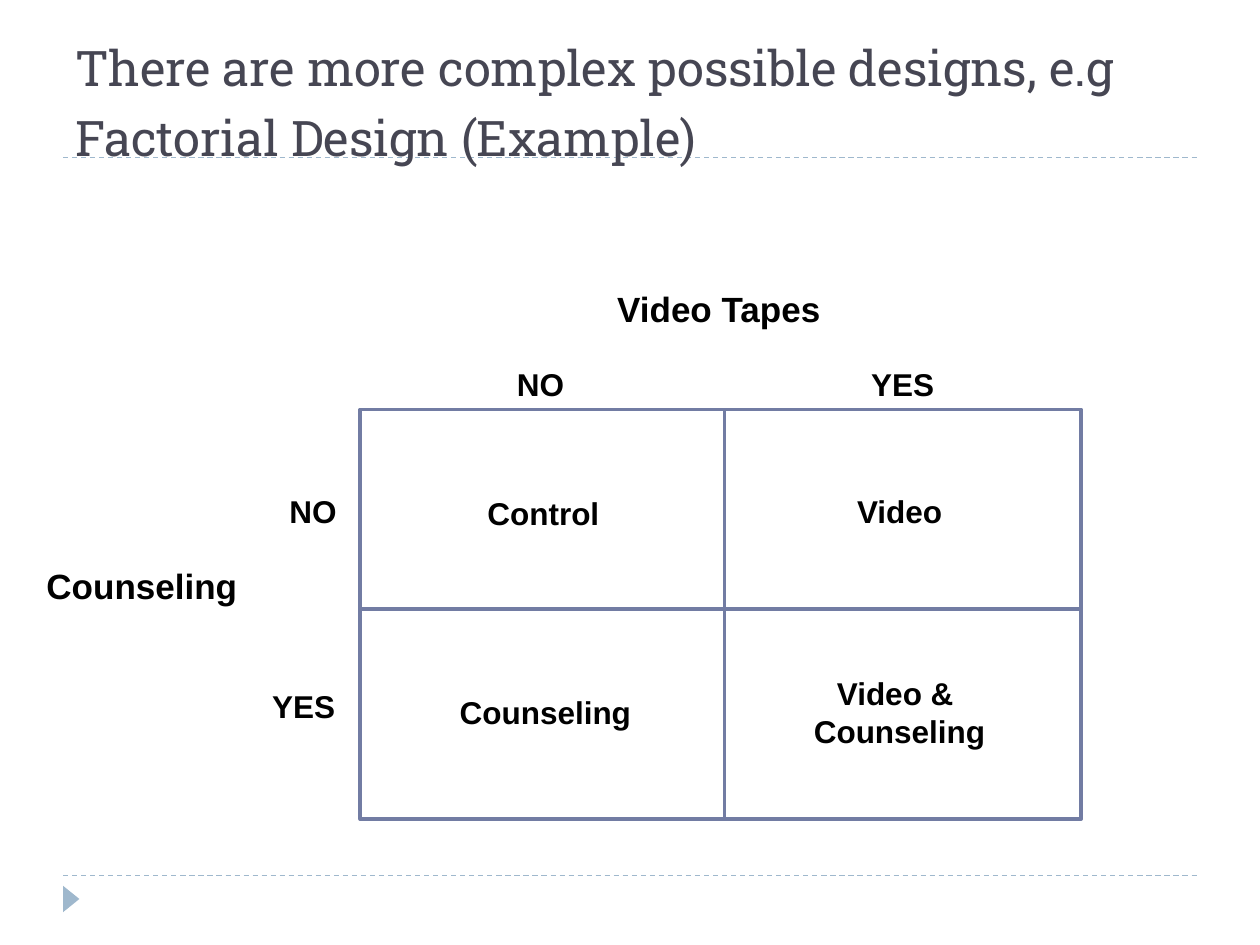
from dataclasses import dataclass

from lxml import etree
from pptx import Presentation
from pptx import util as u
from pptx.dml.color import RGBColor
from pptx.enum import dml, shapes, text
from pptx.oxml.ns import qn

BLACK = RGBColor(0x00, 0x00, 0x00)
TITLE_GRAY = RGBColor(0x46, 0x46, 0x53)
GRID_BLUE = RGBColor(0x72, 0x7C, 0xA3)
PALE_BLUE = RGBColor(0x9F, 0xB8, 0xCD)

LEFT, CENTER, RIGHT = text.PP_ALIGN.LEFT, text.PP_ALIGN.CENTER, text.PP_ALIGN.RIGHT

# Edges of the two-by-two design grid, in inches
GRID_LEFT, GRID_MIDDLE, GRID_RIGHT = 2.86, 5.75, 8.58
GRID_TOP, GRID_CENTER, GRID_BOTTOM = 3.25, 4.83, 6.5


@dataclass
class Label:
    wording: str
    left: float
    top: float
    width: float
    height: float = 0.4
    align: text.PP_ALIGN = CENTER
    size: int = 18
    wrap: bool = False


@dataclass
class Rule:
    start: tuple[float, float]
    end: tuple[float, float]
    color: RGBColor = GRID_BLUE
    width: float = 2.25
    dashed: bool = False


LABELS = [
    # Cells
    Label("Control", 3.77, 3.87, 1.09, align=LEFT),
    Label("Video", 6.7, 3.86, 0.88),
    Label("Counseling", 3.55, 5.45, 1.56, align=LEFT),
    Label("Video & \nCounseling", 6.36, 5.3, 1.56, 0.7),
    # Factor names
    Label("Counseling", 0.27, 4.43, 1.72, 0.43, LEFT, 20),
    Label("Video Tapes", 2.84, 2.23, 5.73, 0.43, size=20, wrap=True),
    # Row levels
    Label("NO", 2.19, 3.86, 0.58, align=RIGHT),
    Label("YES", 2.06, 5.4, 0.7, align=RIGHT),
    # Column levels
    Label("NO", 2.83, 2.85, 2.92, wrap=True),
    Label("YES", GRID_MIDDLE, 2.85, 2.83, wrap=True),
]

FRAME_RULES = [
    Rule((0.5, y), (9.5, y), PALE_BLUE, 0.75, True) for y in (6.95, 1.25)
]
GRID_RULES = [
    Rule((GRID_LEFT, GRID_CENTER), (GRID_RIGHT, GRID_CENTER)),
    Rule((GRID_MIDDLE, GRID_TOP), (GRID_MIDDLE, GRID_BOTTOM)),
]


def draw_rule(slide, rule: Rule) -> None:
    points = [u.Inches(value) for value in (*rule.start, *rule.end)]
    connector = slide.shapes.add_connector(shapes.MSO_CONNECTOR.STRAIGHT, *points)
    connector.line.color.rgb = rule.color
    connector.line.width = u.Pt(rule.width)
    if rule.dashed:
        connector.line.dash_style = dml.MSO_LINE.DASH
    etree.SubElement(connector._element.spPr, qn("a:effectLst"))


def draw_label(slide, label: Label) -> None:
    box = slide.shapes.add_textbox(
        u.Inches(label.left), u.Inches(label.top),
        u.Inches(label.width), u.Inches(label.height),
    )
    frame = box.text_frame
    frame.text = label.wording
    frame.word_wrap = label.wrap
    frame.auto_size = text.MSO_AUTO_SIZE.SHAPE_TO_FIT_TEXT
    for paragraph in frame.paragraphs:
        paragraph.alignment = label.align
        for run in paragraph.runs:
            run.font.name = "Arial"
            run.font.size = u.Pt(label.size)
            run.font.bold = True
            run.font.color.rgb = BLACK


def draw_marker(slide) -> None:
    marker = slide.shapes.add_shape(
        shapes.MSO_SHAPE.ISOSCELES_TRIANGLE,
        u.Inches(0.46), u.Inches(7.07), u.Inches(0.21), u.Inches(0.13),
    )
    marker.rotation = 90
    marker.shadow.inherit = False
    marker.fill.solid()
    marker.fill.fore_color.rgb = PALE_BLUE
    marker.line.fill.background()


def draw_grid(slide) -> None:
    outline = slide.shapes.add_shape(
        shapes.MSO_SHAPE.RECTANGLE,
        u.Inches(GRID_LEFT), u.Inches(GRID_TOP),
        u.Inches(GRID_RIGHT - GRID_LEFT), u.Inches(GRID_BOTTOM - GRID_TOP),
    )
    outline.shadow.inherit = False
    outline.fill.background()
    outline.line.color.rgb = GRID_BLUE
    outline.line.width = u.Pt(2.25)
    for rule in GRID_RULES:
        draw_rule(slide, rule)


def draw_title(slide) -> None:
    box = slide.shapes.add_textbox(
        u.Inches(0.5), u.Inches(0.42), u.Inches(8.5), u.Inches(1.25)
    )
    frame = box.text_frame
    frame.word_wrap = True
    frame.vertical_anchor = text.MSO_ANCHOR.MIDDLE
    paragraph = frame.paragraphs[0]
    # The closing line break lifts the title within its box
    paragraph.text = (
        "There are more complex possible designs, e.g Factorial Design (Example) \v"
    )
    paragraph.line_spacing = u.Pt(40)
    for run in paragraph.runs:
        run.font.name = "Roboto Slab"
        run.font.size = u.Pt(28)
        run.font.color.rgb = TITLE_GRAY


def main() -> None:
    presentation = Presentation()
    presentation.slide_width = u.Inches(10)
    presentation.slide_height = u.Inches(7.5)
    slide = presentation.slides.add_slide(presentation.slide_layouts[6])

    # Page frame
    for rule in FRAME_RULES:
        draw_rule(slide, rule)
    draw_marker(slide)

    # Factorial design
    draw_grid(slide)
    for label in LABELS:
        draw_label(slide, label)

    draw_title(slide)
    presentation.save("out.pptx")


if __name__ == "__main__":
    main()
